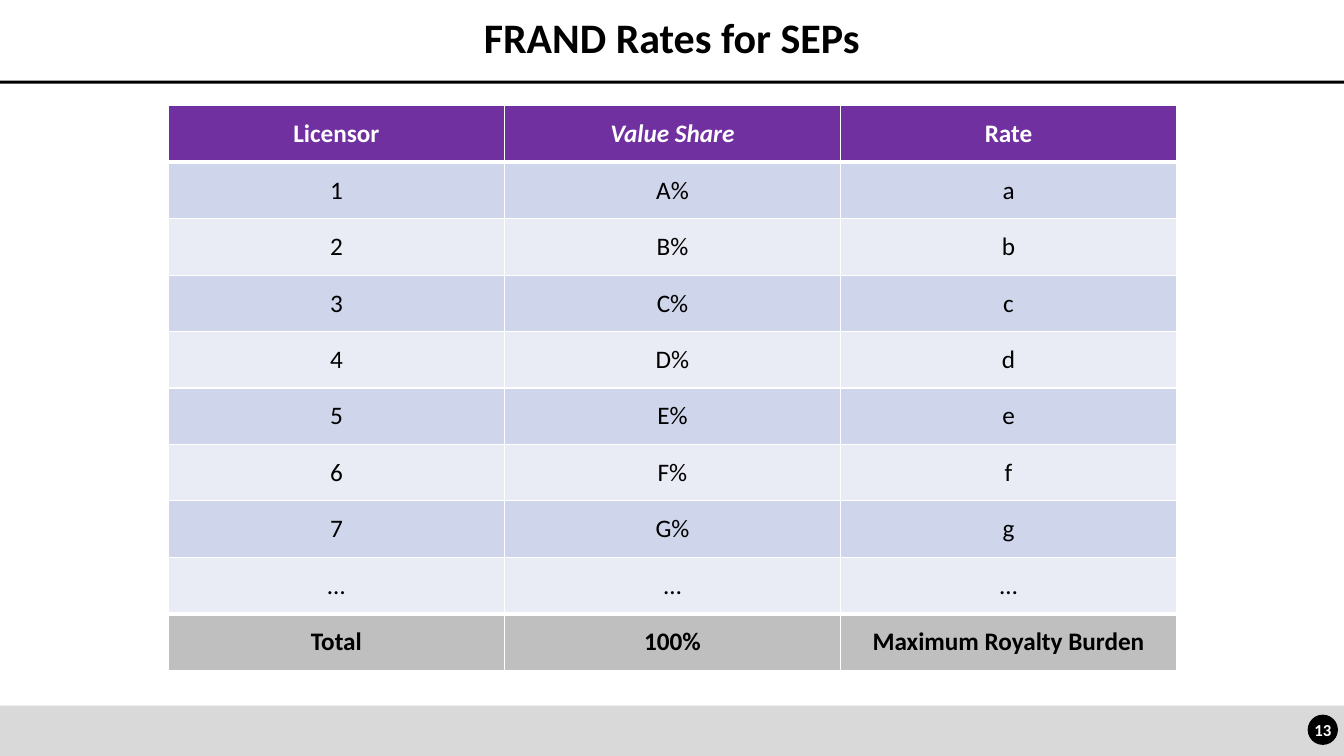
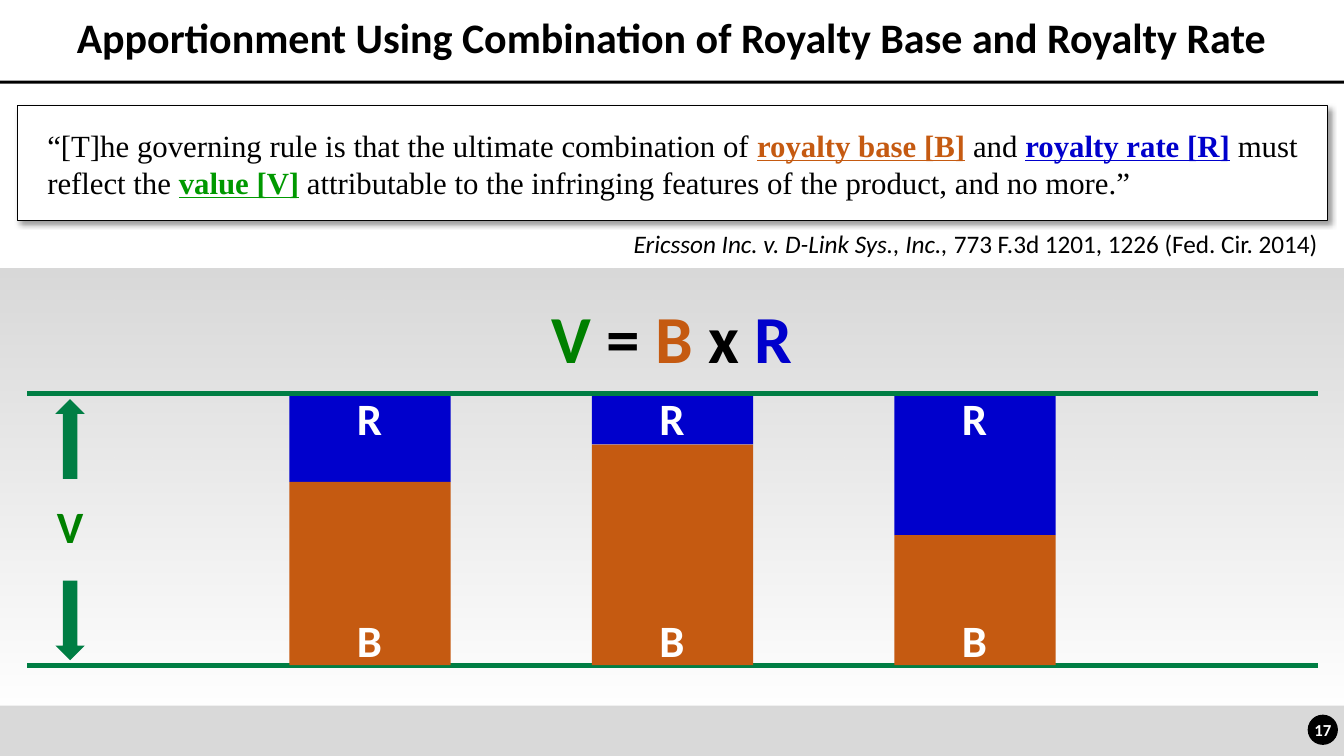
from lxml import etree
from pptx import Presentation
from pptx.dml.color import RGBColor
from pptx.enum.shapes import MSO_CONNECTOR as Link, MSO_SHAPE as Kind
from pptx.enum.text import MSO_ANCHOR as Anchor, MSO_AUTO_SIZE as Auto, PP_ALIGN as Align
from pptx.oxml import parse_xml
from pptx.oxml.ns import nsdecls, qn
from pptx.util import Inches, Pt

WIDE, HIGH = 13.33, 7.5
BLACK, WHITE, GRAY = "000000", "FFFFFF", "D9D9D9"
BLUE, RUST, GREEN, LEAF, LIME = "0000CC", "C55A11", "007E44", "008000", "009900"
HEAD, DARK, LIGHT, TOTAL = "7030A0", "CFD5EA", "E9EBF5", "BFBFBF"


def tint(code):
    return RGBColor.from_string(code)


def box(*sizes):
    return [Inches(size) for size in sizes]


class Deck:
    """Holds the shared style and draws on the current slide."""

    def __init__(self):
        self.show = Presentation()
        self.show.slide_width, self.show.slide_height = box(WIDE, HIGH)
        self.page = None

    def start(self, title, number):
        self.page = self.show.slides.add_slide(self.show.slide_layouts[5])
        self.shape(0, 7, WIDE, 0.5, GRAY)
        badge = self.shape(12.97, 7.09, 0.3, 0.3, BLACK, Kind.OVAL)
        self.shape(0, 0.8, WIDE, 0.03, BLACK)
        frame = badge.text_frame
        self.inset(frame, 0, 0)
        frame.word_wrap = False
        self.text(frame, number, 12, WHITE, True)

        name = self.page.shapes.title
        name.left, name.top, name.width, name.height = box(0, 0, WIDE, 0.8)
        name.text_frame.auto_size = Auto.NONE
        name.text_frame.vertical_anchor = Anchor.MIDDLE
        self.text(name.text_frame, title, 30, bold=True).line_spacing = 0.9

    def inset(self, frame, side, edge):
        frame.margin_left = frame.margin_right = Inches(side)
        frame.margin_top = frame.margin_bottom = Inches(edge)

    def text(self, frame, parts, size, color=BLACK, bold=None, face="Calibri",
             align=Align.CENTER):
        para = frame.paragraphs[0]
        para.alignment = align
        font = para.font
        font.size, font.name, font.bold = Pt(size), face, bold
        font.color.rgb = tint(color)
        if isinstance(parts, str):
            parts = [(parts, None, "")]
        for words, hue, marks in parts:
            run = para.add_run()
            run.text = words
            if hue:
                run.font.color.rgb = tint(hue)
            if "b" in marks:
                run.font.bold = True
            if "i" in marks:
                run.font.italic = True
            if "u" in marks:
                run.font.underline = True
        return para

    def shape(self, left, top, width, height, color, kind=Kind.RECTANGLE):
        item = self.page.shapes.add_shape(kind, *box(left, top, width, height))
        item.shadow.inherit = False
        item.fill.solid()
        item.fill.fore_color.rgb = tint(color)
        item.line.fill.background()
        return item

    def fade(self, left, top, width, height, color):
        fill = self.shape(left, top, width, height, color).fill
        fill.gradient()
        fill.gradient_angle = 270
        for stop, place in zip(fill.gradient_stops, (0, 1)):
            stop.position = place
            stop.color.rgb = tint(color)
        last = fill._xPr.findall(".//" + qn("a:srgbClr"))[-1]
        etree.SubElement(last, qn("a:alpha")).set("val", "0")

    def quote(self, left, top, width, height, parts):
        item = self.shape(left, top, width, height, WHITE)
        item.line.color.rgb = tint(BLACK)
        item.line.width = Pt(0.75)
        effect = item._element.spPr.find(qn("a:effectLst"))
        effect.append(parse_xml(
            f'<a:outerShdw {nsdecls("a")} blurRad="{Pt(4)}" dist="{Pt(3)}" dir="2700000" '
            f'algn="tl" rotWithShape="0"><a:srgbClr val="{BLACK}">'
            '<a:alpha val="40000"/></a:srgbClr></a:outerShdw>'))
        frame = item.text_frame
        frame.word_wrap = True
        self.inset(frame, 0.3, 0.2)
        self.text(frame, parts, 22, face="Times New Roman", align=Align.JUSTIFY)

    def label(self, left, top, width, height, parts, size, color=BLACK, bold=None,
              align=Align.CENTER):
        frame = self.page.shapes.add_textbox(*box(left, top, width, height)).text_frame
        frame.word_wrap = False
        frame.auto_size = Auto.SHAPE_TO_FIT_TEXT
        self.text(frame, parts, size, color, bold, align=align)

    def rule(self, left, right, top, color):
        item = self.page.shapes.add_connector(Link.STRAIGHT, *box(left, top, right, top))
        item.line.color.rgb = tint(color)
        item.line.width = Pt(3.75)
        etree.SubElement(item._element.spPr, qn("a:effectLst"))

    def edge(self, cell, **widths):
        props = cell._tc.get_or_add_tcPr()
        for side in "LRTB":
            props.append(parse_xml(
                f'<a:ln{side} {nsdecls("a")} w="{Pt(widths.get(side, 1))}"><a:solidFill>'
                f'<a:srgbClr val="{WHITE}"/></a:solidFill></a:ln{side}>'))

    def table(self, left, top, width, height, rows):
        count, last = len(rows), len(rows) - 1
        grid = self.page.shapes.add_table(
            count, len(rows[0]), *box(left, top, width, height)).table
        grid.first_row = grid.horz_banding = False
        for r, row in enumerate(rows):
            grid.rows[r].height = Inches(height / count)
            fill = {0: HEAD, last: TOTAL}.get(r, DARK if r % 2 else LIGHT)
            for c, part in enumerate(row):
                cell = grid.cell(r, c)
                self.edge(cell, T=3 if r in (1, last) else 1,
                          B=3 if r in (0, last - 1) else 1)
                cell.fill.solid()
                cell.fill.fore_color.rgb = tint(fill)
                cell.vertical_anchor = Anchor.MIDDLE
                self.text(cell.text_frame, part, 18, BLACK if r else WHITE,
                          r in (0, last))


def rates(deck):
    deck.start("FRAND Rates for SEPs", "13")
    rows = [["Licensor", [("Value Share", None, "i")], "Rate"]]
    rows += [[str(n), f"{mark}%", mark.lower()] for n, mark in enumerate("ABCDEFG", 1)]
    rows += [["…"] * 3, ["Total", "100%", "Maximum Royalty Burden"]]
    deck.table(1.67, 1.05, 10, 5.6, rows)


def split(deck):
    deck.start("Apportionment Using Combination of Royalty Base and Royalty Rate", "17")
    deck.fade(0, 2.66, WIDE, 4.38, GRAY)
    deck.quote(0.17, 1.05, 13, 1.14, [
        ("“[T]he governing rule is that the ultimate combination of ", None, ""),
        ("royalty base [B]", RUST, "bu"),
        (" and ", None, ""),
        ("royalty rate [R]", BLUE, "bu"),
        (" must reflect the ", None, ""),
        ("value [V]", LIME, "bu"),
        (" attributable to the infringing features of the product, and no more.”", None, ""),
    ])
    deck.label(6.12, 2.22, 7.05, 0.4, [
        ("Ericsson Inc. v. D-Link Sys., Inc., ", None, "i"),
        ("773 F.3d 1201, 1226 (Fed. Cir. 2014)", None, ""),
    ], 18, align=Align.RIGHT)
    deck.label(5.36, 2.89, 2.61, 0.91, [
        ("V", LEAF, ""), (" = ", None, ""), ("B", RUST, ""), (" x ", None, ""),
        ("R", BLUE, ""),
    ], 48, bold=True)

    top, base, wide = 3.9, 6.6, 1.6
    bars = [(2.87 + 3 * n, cut) for n, cut in enumerate((4.78, 4.41, 5.31))]
    for left, cut in bars:
        deck.shape(left, top, wide, cut - top, BLUE)
    for level in (base, top):
        deck.rule(0.27, 13.07, level, GREEN)
    for left, cut in bars:
        deck.shape(left, cut, wide, base - cut, RUST)
        for mark, level in (("R", 3.83), ("B", 6.03)):
            deck.label(left + 0.56, level, 0.47, 0.64, mark, 32, WHITE, True)

    deck.shape(0.55, 3.96, 0.29, 0.79, GREEN, Kind.UP_ARROW)
    deck.label(0.46, 4.9, 0.47, 0.64, "V", 32, LEAF, True)
    deck.shape(0.55, 5.76, 0.29, 0.79, GREEN, Kind.DOWN_ARROW)


def main():
    deck = Deck()
    rates(deck)
    split(deck)
    deck.show.save("out.pptx")


if __name__ == "__main__":
    main()
